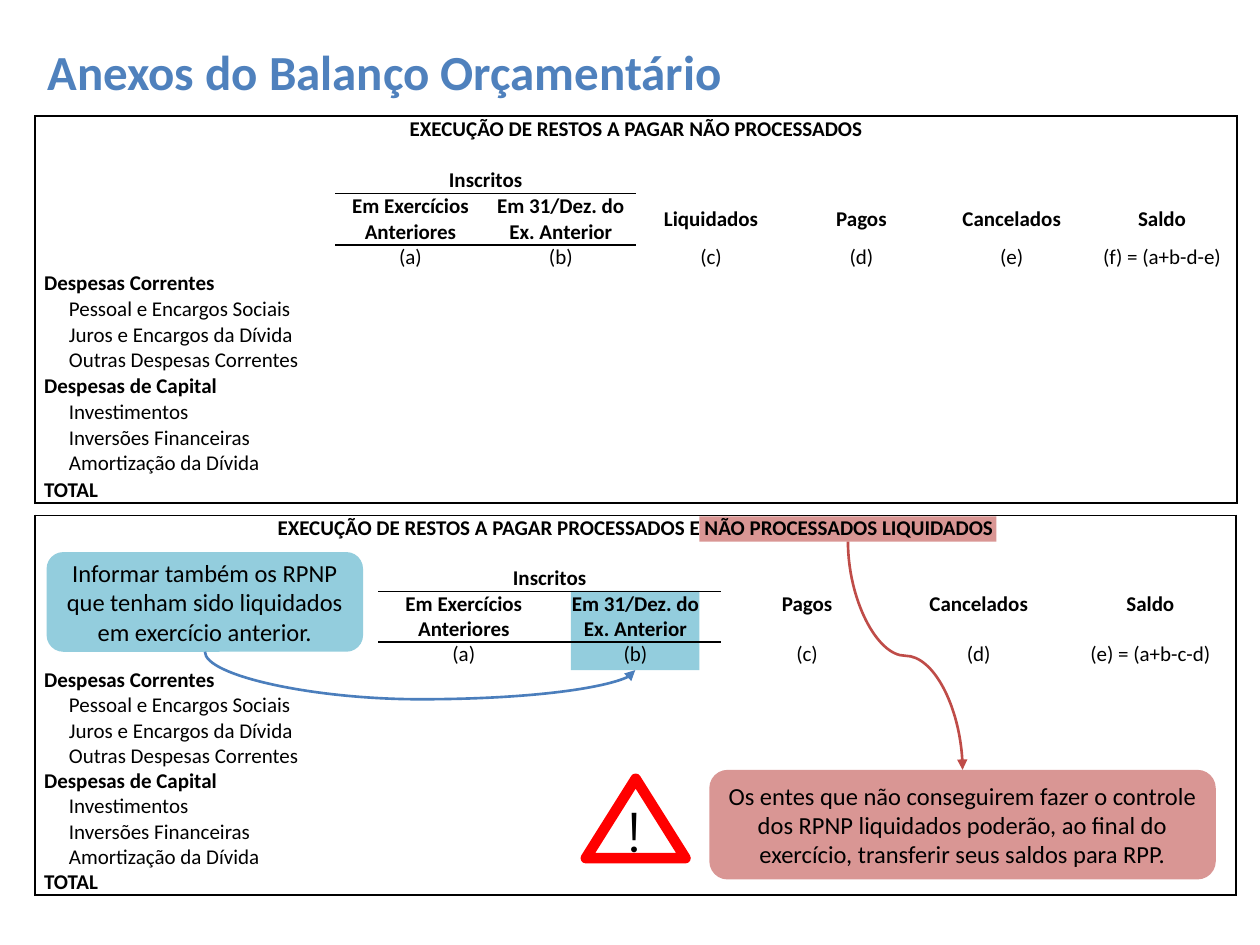
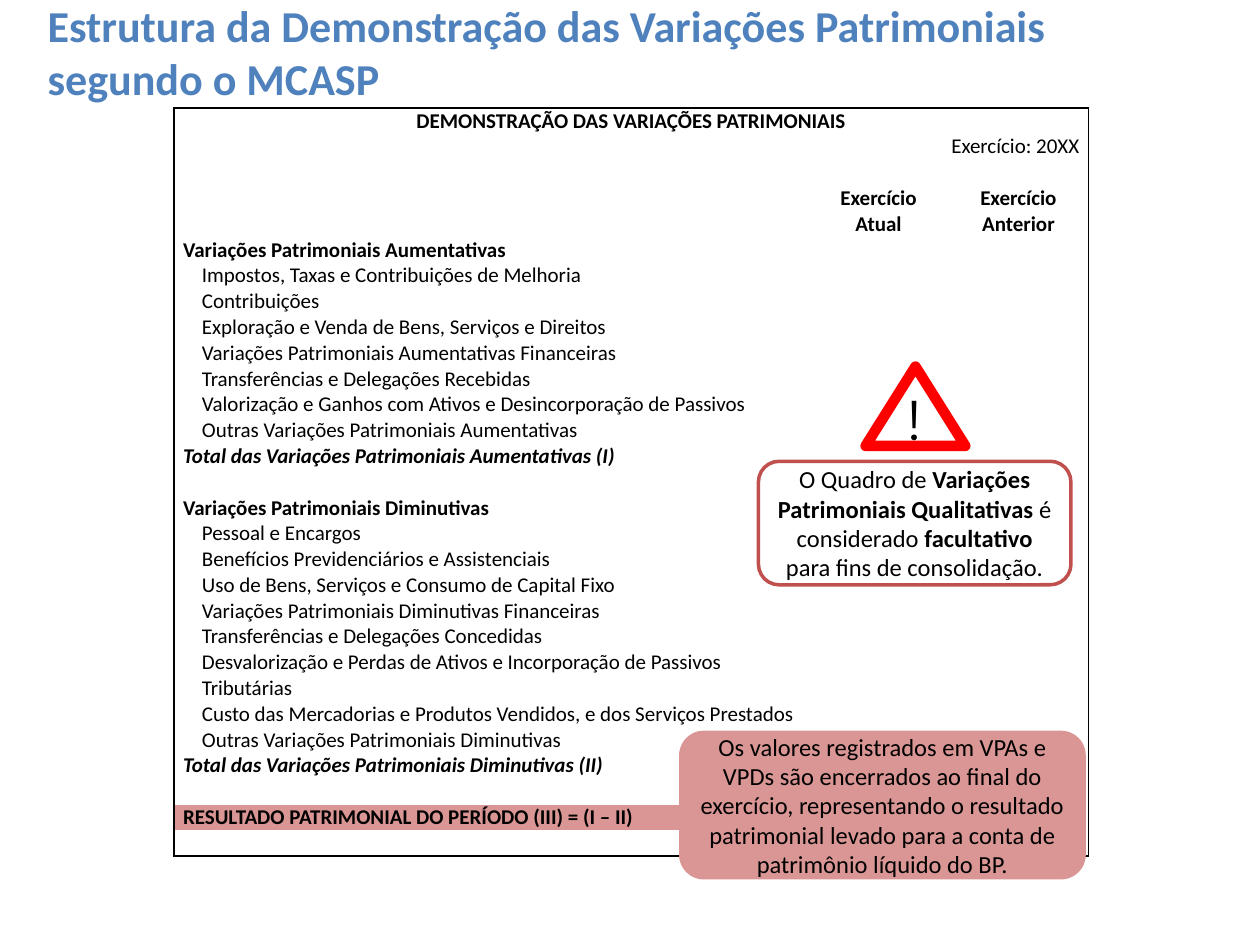
from lxml import etree
from pptx import Presentation
from pptx import util as u
from pptx.dml.color import RGBColor
from pptx.enum import shapes, text
from pptx.oxml.ns import qn

# ---- Content ----
BLUE, BLACK, WHITE, RED = "4F81BD", "000000", "FFFFFF", "FF0000"
ROSE, AQUA, BRICK = "D99694", "93CDDD", "C0504D"
NO_GRID = "{2D5ABB26-0587-4C30-8999-92F81FD0307C}"

TITLES = ["Anexos do Balanço Orçamentário",
          "Estrutura da Demonstração das Variações Patrimoniais segundo o MCASP"]

CURRENT = ["Pessoal e Encargos Sociais", "Juros e Encargos da Dívida",
           "Outras Despesas Correntes"]
CAPITAL = ["Investimentos", "Inversões Financeiras", "Amortização da Dívida"]
REGISTERED = ["Em Exercícios Anteriores", "Em 31/Dez. do Ex. Anterior"]

UNPROCESSED = {
    "title": "EXECUÇÃO DE RESTOS A PAGAR NÃO PROCESSADOS",
    "heads": REGISTERED + ["Liquidados", "Pagos", "Cancelados", "Saldo"],
    "keys": ["(a)", "(b)", "(c)", "(d)", "(e)", "(f) = (a+b-d-e)"],
}
PROCESSED = {
    "title": "EXECUÇÃO DE RESTOS A PAGAR PROCESSADOS E NÃO PROCESSADOS LIQUIDADOS",
    "heads": REGISTERED + ["Pagos", "Cancelados", "Saldo"],
    "keys": ["(a)", "(b)", "(c)", "(d)", "(e) = (a+b-c-d)"],
}

INCREASES = ["Impostos, Taxas e Contribuições de Melhoria", "Contribuições",
             "Exploração e Venda de Bens, Serviços e Direitos",
             "Variações Patrimoniais Aumentativas Financeiras",
             "Transferências e Delegações Recebidas",
             "Valorização e Ganhos com Ativos e Desincorporação de Passivos",
             "Outras Variações Patrimoniais Aumentativas"]
DECREASES = ["Pessoal e Encargos", "Benefícios Previdenciários e Assistenciais",
             "Uso de Bens, Serviços e Consumo de Capital Fixo",
             "Variações Patrimoniais Diminutivas Financeiras",
             "Transferências e Delegações Concedidas",
             "Desvalorização e Perdas de Ativos e Incorporação de Passivos",
             "Tributárias",
             "Custo das Mercadorias e Produtos Vendidos, e dos Serviços Prestados",
             "Outras Variações Patrimoniais Diminutivas"]
RESULT = "RESULTADO PATRIMONIAL DO PERÍODO (III) = (I – II)"

NOTE_UNCONTROLLED = ("Os entes que não conseguirem fazer o controle dos RPNP liquidados "
                     "poderão, ao final do exercício, transferir seus saldos para RPP.")
NOTE_INFORM = "Informar também os RPNP que tenham sido liquidados em exercício anterior."
NOTE_CLOSING = ("Os valores registrados em VPAs e VPDs são encerrados ao final do exercício, "
                "representando o resultado patrimonial levado para a conta de patrimônio "
                "líquido do BP.")
NOTE_OPTIONAL = [("O Quadro de ", False), ("Variações Patrimoniais Qualitativas", True),
                 (" é considerado ", False), ("facultativo", True),
                 (" para fins de consolidação.", False)]

ALIGN = {"l": text.PP_ALIGN.LEFT, "c": text.PP_ALIGN.CENTER, "r": text.PP_ALIGN.RIGHT}


# ---- Helpers ----
def rgb(color):
    return RGBColor.from_string(color)


def write(tf, paras, size=12, color=BLACK, bold=False, italic=False, align="l",
          font="Calibri", indent=0, middle=False):
    """Each paragraph is a string or a list of (text, bold) runs."""
    tf.word_wrap = True
    tf.vertical_anchor = text.MSO_ANCHOR.MIDDLE if middle else text.MSO_ANCHOR.TOP
    for i, para in enumerate(paras):
        p = tf.add_paragraph() if i else tf.paragraphs[0]
        p.alignment = ALIGN[align]
        if indent:
            p._p.get_or_add_pPr().set("marL", str(u.Cm(indent)))
        for words, strong in [(para, bold)] if isinstance(para, str) else para:
            r = p.add_run()
            r.text = words
            r.font.name, r.font.size = font, u.Pt(size)
            r.font.bold, r.font.italic = strong, italic
            r.font.color.rgb = rgb(color)


def add_title(s, words, top, size):
    sp = s.shapes.add_textbox(u.Cm(0.71), u.Cm(top), u.Cm(22.86), u.Cm(1.8))
    write(sp.text_frame, [words], size=size, color=BLUE, bold=True, middle=True)


def add_box(parent, kind, box, fill, line=None, width=0):
    sp = parent.add_shape(kind, *map(u.Cm, box))
    sp.shadow.inherit = False
    sp.fill.solid()
    sp.fill.fore_color.rgb = rgb(fill)
    if line:
        sp.line.color.rgb = rgb(line)
        sp.line.width = u.Pt(width)
    else:
        sp.line.fill.background()
    return sp


def add_note(s, box, words, fill, **line):
    sp = add_box(s.shapes, shapes.MSO_SHAPE.ROUNDED_RECTANGLE, box, fill, **line)
    write(sp.text_frame, [words], size=14, align="c", middle=True)
    return sp


def add_warning(s, left, top):
    group = s.shapes.add_group_shape().shapes
    sp = add_box(group, shapes.MSO_SHAPE.ISOSCELES_TRIANGLE,
                 (left, top, 2.01, 1.6), WHITE, RED, 6)
    etree.SubElement(sp.line._get_or_add_ln(), qn("a:round"))
    mark = group.add_textbox(*map(u.Cm, (left + 0.58, top + 0.23, 0.79, 1.63)))
    write(mark.text_frame, ["!"], size=32, align="c", font="Montserrat")


def add_curve(s, start, start_site, end, end_site, color, bend=None):
    """Curved arrow that leaves and arrives vertically."""
    c = s.shapes.add_connector(shapes.MSO_CONNECTOR.CURVE, 0, 0, 0, 0)
    c.begin_connect(start, start_site)
    c.end_connect(end, end_site)
    x1, y1, x2, y2 = c.begin_x, c.begin_y, c.end_x, c.end_y
    w, h = y2 - y1, x2 - x1
    c.left, c.top = (x1 + x2 - w) // 2, (y1 + y2 - h) // 2
    c.width, c.height = w, h
    spPr = c._element.spPr
    xfrm = spPr.find(qn("a:xfrm"))
    xfrm.set("rot", "16200000")
    xfrm.set("flipH", "1")
    if bend:
        guides = spPr.find(qn("a:prstGeom")).find(qn("a:avLst"))
        etree.SubElement(guides, qn("a:gd"), name="adj1", fmla=f"val {bend}")
    c.line.color.rgb = rgb(color)
    c.line.width = u.Pt(1.5)
    etree.SubElement(c.line._get_or_add_ln(), qn("a:tailEnd"), type="triangle")
    etree.SubElement(spPr, qn("a:effectLst"))


# ---- Tables ----
def set_borders(cell, sides):
    tcPr = cell._tc.get_or_add_tcPr()
    for i, side in enumerate(x for x in "LRTB" if x in sides):
        ln = etree.Element(qn(f"a:ln{side}"), w=str(u.Pt(1)))
        fill = etree.SubElement(ln, qn("a:solidFill"))
        etree.SubElement(fill, qn("a:srgbClr"), val=BLACK)
        tcPr.insert(i, ln)


def add_framed_table(s, left, top, widths, rows, line_height, merges, ruled=()):
    """rows: (lines, {column: (paragraphs, format)}); merges: (row, first, last)."""
    heights = [lines * line_height for lines, _ in rows]
    frame = s.shapes.add_table(len(rows), len(widths), u.Cm(left), u.Cm(top),
                               u.Cm(sum(widths)), u.Cm(sum(heights)))
    tbl = frame.table
    tbl.first_row = tbl.horz_banding = False
    tbl._tbl.tblPr.find(qn("a:tableStyleId")).text = NO_GRID
    for column, width in zip(tbl.columns, widths):
        column.width = u.Cm(width)
    last_row, last_col = len(rows) - 1, len(widths) - 1
    for i, (_, cells) in enumerate(rows):
        tbl.rows[i].height = u.Cm(heights[i])
        for j in range(len(widths)):
            cell = tbl.cell(i, j)
            cell.margin_left = cell.margin_right = u.Cm(0.18)
            cell.margin_top = cell.margin_bottom = 0
            cell.fill.background()
            edges = {"L": j == 0, "R": j == last_col, "T": i == 0, "B": i == last_row}
            sides = {side for side, on in edges.items() if on}
            if (i, j) in ruled:
                sides.add("B")
            if (i - 1, j) in ruled:
                sides.add("T")
            set_borders(cell, sides)
            if j in cells:
                paras, style = cells[j]
                write(cell.text_frame, paras, **style)
                cell.vertical_anchor = (text.MSO_ANCHOR.MIDDLE if style.get("middle")
                                        else text.MSO_ANCHOR.TOP)
            else:
                etree.SubElement(cell.text_frame.paragraphs[0]._p,
                                 qn("a:endParaRPr"), sz="1200")
    for i, first, last in merges:
        tbl.cell(i, first).merge(tbl.cell(i, last))
        if last == last_col:
            set_borders(tbl.cell(i, first), "R")
    return tbl


HEAD = dict(bold=True, align="c")


def add_budget_table(s, data, top, widths, line_height, middle, merges=()):
    def across(words, **style):
        return {j: ([word], style) for j, word in enumerate(words, 1)}

    def label(*words, **style):
        return len(words), {0: (words, style)}

    rows = [
        (1, {0: ([data["title"]], HEAD)}),
        (1, {}),
        (1, {1: (["Inscritos"], HEAD)}),
        (2, across(data["heads"], middle=middle, **HEAD)),
        (1, across(data["keys"], align="c")),
        label("Despesas Correntes", bold=True),
        label(*CURRENT, indent=0.5),
        label("Despesas de Capital", bold=True),
        label(*CAPITAL, indent=0.5),
        label("TOTAL", bold=True),
    ]
    add_framed_table(s, 0.71, top, widths, rows, line_height,
                     [(0, 0, len(widths) - 1), (2, 1, 2), *merges],
                     ruled={(2, 1), (2, 2)})


def add_variation_table(s):
    def label(words, **style):
        return 1, {0: ([words], style)}

    def section(kind, items, number):
        return [label(f"Variações Patrimoniais {kind}", bold=True),
                *(label(item, indent=0.38) for item in items),
                label(f"Total das Variações Patrimoniais {kind} ({number})",
                      bold=True, italic=True),
                (1, {})]

    rows = [
        (1, {0: (["DEMONSTRAÇÃO DAS VARIAÇÕES PATRIMONIAIS"], HEAD)}),
        (1, {3: (["Exercício: 20XX"], dict(align="r"))}),
        (1, {}),
        (2, {3: (["Exercício Atual"], HEAD), 4: (["Exercício Anterior"], HEAD)}),
        *section("Aumentativas", INCREASES, "I"),
        *section("Diminutivas", DECREASES, "II"),
        label(RESULT, bold=True),
        (1, {}),
    ]
    merges = [(0, 0, 4), (1, 3, 4)] + [(i, 0, 2) for i in range(3, len(rows))]
    tbl = add_framed_table(s, 3.51, 2.18, [2.79, 2.79, 7.21, 2.82, 2.82],
                           rows, 0.52, merges)
    result = tbl.cell(len(rows) - 2, 0)
    result.fill.solid()
    result.fill.fore_color.rgb = rgb(ROSE)


# ---- Slides ----
def budget_slide(s):
    add_title(s, TITLES[0], 0.53, 28)
    add_budget_table(s, UNPROCESSED, 2.34, [6.05] + [3.03] * 6, 0.52, True, [(1, 0, 6)])
    # Highlights and notes lie under the second table
    rect = shapes.MSO_SHAPE.RECTANGLE
    settled = add_box(s.shapes, rect, (14.1, 10.41, 5.99, 0.51), ROSE)
    uncontrolled = add_note(s, (14.3, 15.52, 10.21, 2.21), NOTE_UNCONTROLLED, ROSE)
    add_curve(s, settled, 2, uncontrolled, 0, "BF4C48")
    add_warning(s, 11.81, 15.7)
    inform = add_note(s, (0.94, 11.13, 6.38, 2.01), NOTE_INFORM, AQUA)
    year_end = add_box(s.shapes, rect, (11.51, 11.91, 2.59, 1.6), AQUA)
    add_curve(s, inform, 2, year_end, 2, "4B7EBC", bend=258700)
    add_budget_table(s, PROCESSED, 10.39, [6.91] + [3.46] * 5, 0.51, False)


def variation_slide(s):
    add_variation_table(s)
    add_warning(s, 17.45, 7.39)
    add_note(s, (13.69, 14.73, 8.2, 3), NOTE_CLOSING, ROSE)
    add_title(s, TITLES[1], 0.13, 25.2)
    add_note(s, (15.29, 9.3, 6.3, 2.49), NOTE_OPTIONAL, WHITE, line=BRICK, width=2)


def main():
    prs = Presentation()
    prs.slide_width, prs.slide_height = u.Cm(25.4), u.Cm(19.05)
    for build in (budget_slide, variation_slide):
        build(prs.slides.add_slide(prs.slide_layouts[6]))
    prs.save("out.pptx")


if __name__ == "__main__":
    main()
